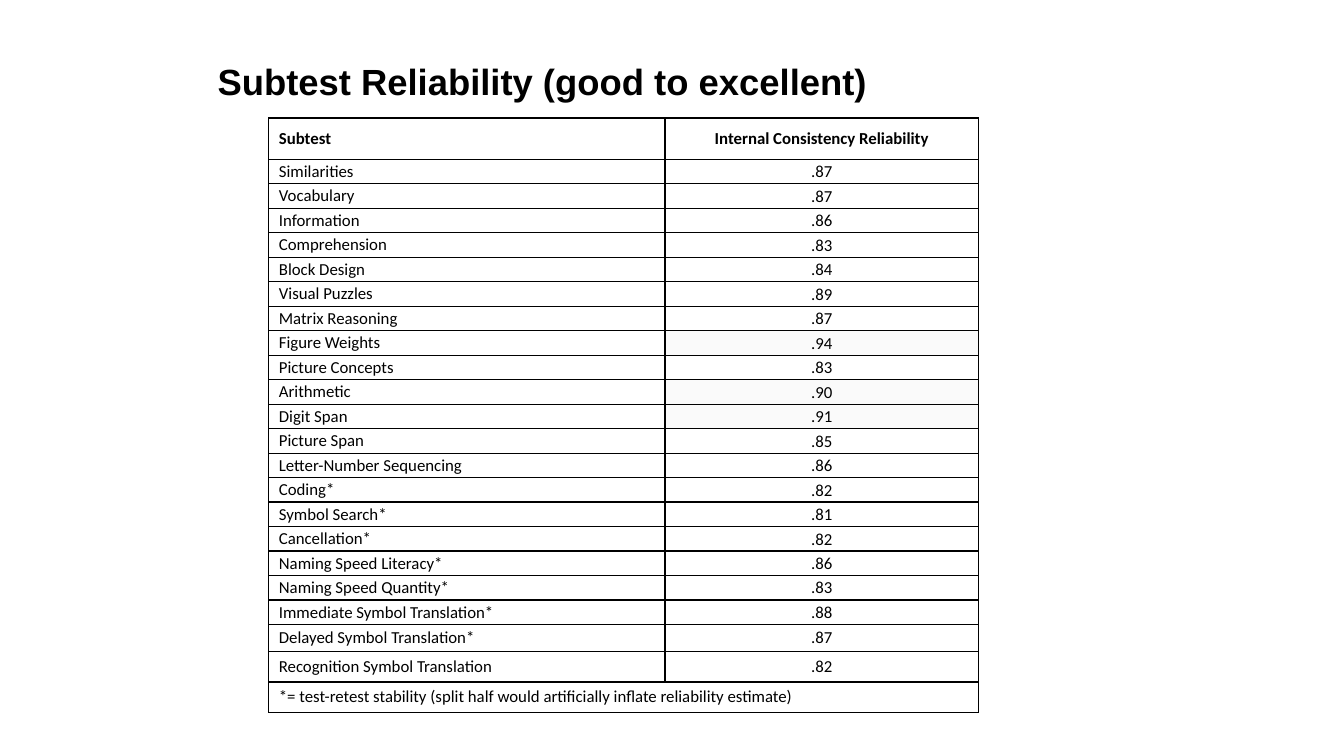
import pptx
import pptx.util
import pptx.dml.color
import pptx.enum.text
import pptx.oxml
import pptx.oxml.ns

Inches, Pt = pptx.util.Inches, pptx.util.Pt
MIDDLE = pptx.enum.text.MSO_ANCHOR.MIDDLE
CENTER = pptx.enum.text.PP_ALIGN.CENTER
LEFT = pptx.enum.text.PP_ALIGN.LEFT
NS = pptx.oxml.ns.nsdecls("a")


def color(hex_value):
    return pptx.dml.color.RGBColor.from_string(hex_value)


def apply(target, values):
    for name, value in values.items():
        setattr(target, name, value)


# Slide; lengths below are percentages of its width and height
deck = pptx.Presentation()
deck.slide_width, deck.slide_height = Inches(13.33), Inches(7.5)
slide = deck.slides.add_slide(deck.slide_layouts[6])
across, down = deck.slide_width / 100, deck.slide_height / 100

# Heading
heading = slide.shapes.add_textbox(
    int(15.45 * across), int(5.73 * down), int(68.64 * across), int(9.87 * down))
frame = heading.text_frame
apply(frame, {"word_wrap": True, "vertical_anchor": MIDDLE,
              "margin_left": Inches(0.1), "margin_right": Inches(0.1),
              "margin_top": Inches(0.1), "margin_bottom": Inches(0.1)})
frame.text = "Subtest Reliability (good to excellent)"
heading_font = frame.paragraphs[0].runs[0].font
apply(heading_font, {"name": "Arial", "size": Pt(26), "bold": True})
heading_font.color.rgb = color("000000")

# Reliability of each subtest
reliabilities = [
    ("Subtest", "Internal Consistency Reliability"),
    ("Similarities", ".87"),
    ("Vocabulary", ".87"),
    ("Information", ".86"),
    ("Comprehension", ".83"),
    ("Block Design", ".84"),
    ("Visual Puzzles", ".89"),
    ("Matrix Reasoning", ".87"),
    ("Figure Weights", ".94"),
    ("Picture Concepts", ".83"),
    ("Arithmetic", ".90"),
    ("Digit Span", ".91"),
    ("Picture Span", ".85"),
    ("Letter-Number Sequencing", ".86"),
    ("Coding*", ".82"),
    ("Symbol Search*", ".81"),
    ("Cancellation*", ".82"),
    ("Naming Speed Literacy*", ".86"),
    ("Naming Speed Quantity*", ".83"),
    ("Immediate Symbol Translation*", ".88"),
    ("Delayed Symbol Translation*", ".87"),
    ("Recognition Symbol Translation", ".82"),
    ("*= test-retest stability (split half would artificially inflate reliability estimate)", ""),
]
last = len(reliabilities) - 1
last_tight_row = 16
column_shares = [29.48, 23.33]
row_shares = [5.47] + [3.24] * (last - 3) + [3.6, 4, 4]
roomy = {"margin_left": Inches(0.1), "margin_right": Inches(0.1),
         "margin_top": Inches(0.02), "margin_bottom": Inches(0.02)}
tight = {"margin_left": Inches(0.01), "margin_right": Inches(0.01),
         "margin_top": Inches(0.01), "margin_bottom": 0}

# Table grid
table = slide.shapes.add_table(
    len(reliabilities), 2, int(20 * across), int(15.6 * down),
    int(sum(column_shares) * across), int(sum(row_shares) * down)).table
apply(table, {"first_row": False, "horz_banding": False})
for column, share in zip(table.columns, column_shares):
    column.width = int(share * across)
for row, share in zip(table.rows, row_shares):
    row.height = int(share * down)
table.cell(last, 0).merge(table.cell(last, 1))

# Table cells
for r, texts in enumerate(reliabilities):
    for c, text in enumerate(texts):
        cell = table.cell(r, c)
        is_tight = c == 1 and 1 <= r <= last_tight_row
        apply(cell, tight if is_tight else roomy)
        cell.vertical_anchor = MIDDLE
        for side in ("lnL", "lnR", "lnT", "lnB"):
            cell._tc.get_or_add_tcPr().append(pptx.oxml.parse_xml(
                f'<a:{side} {NS} w="12700"><a:solidFill><a:srgbClr val="000000"/>'
                f'</a:solidFill></a:{side}>'))
        cell.fill.solid()
        is_excellent = c == 1 and text.startswith(".9")
        cell.fill.fore_color.rgb = color("FAFAFA" if is_excellent else "FFFFFF")
        if not text:
            continue
        cell.text = text
        paragraph = cell.text_frame.paragraphs[0]
        paragraph.alignment = CENTER if c else LEFT
        if not is_tight:
            paragraph._p.get_or_add_pPr().insert(0, pptx.oxml.parse_xml(
                f'<a:spcBef {NS}><a:spcPct val="20000"/></a:spcBef>'))
        font = paragraph.runs[0].font
        apply(font, {"name": "Calibri", "size": Pt(12), "bold": r == 0})
        font.color.rgb = color("000000")

deck.save("out.pptx")
